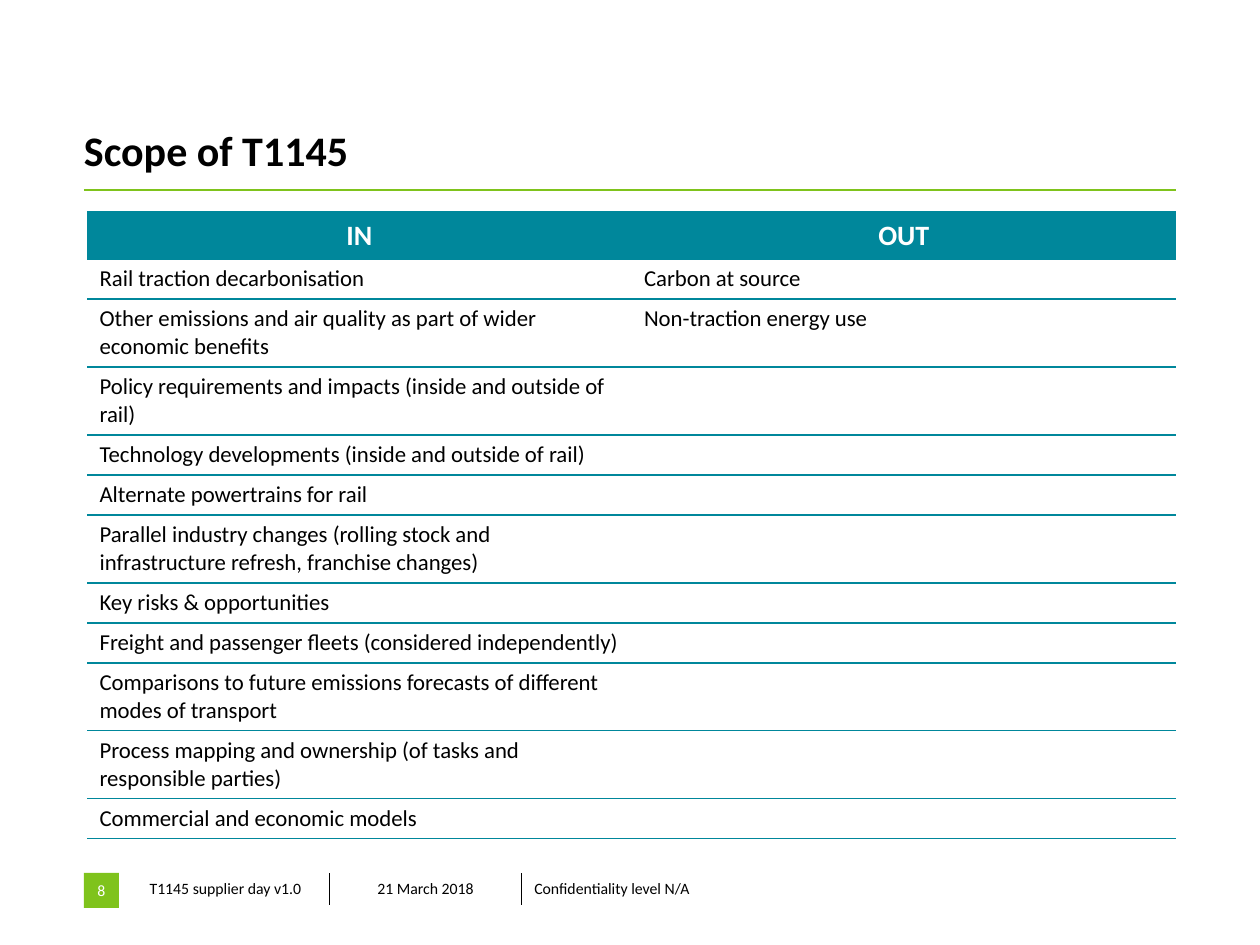
from dataclasses import dataclass
from lxml.etree import SubElement
from pptx import Presentation
from pptx.dml.color import RGBColor
from pptx.enum.shapes import MSO_CONNECTOR, MSO_SHAPE
from pptx.enum.text import MSO_ANCHOR, PP_ALIGN
from pptx.oxml import parse_xml
from pptx.oxml.ns import nsdecls, qn
from pptx.util import Pt


@dataclass(frozen=True)
class Theme:
    font: str = "Calibri"
    teal: str = "00879B"
    green: str = "7FC31C"
    black: str = "000000"
    white: str = "FFFFFF"
    title: int = 24
    head: int = 16
    body: int = 13
    foot: int = 9


THEME = Theme()
SCALE = 914400 / 126
LINE, TALL, HEAD = 40, 68, 47

# Each entry: in scope, out of scope, row height
SCOPE = [
    ("Rail traction decarbonisation", "Carbon at source", LINE),
    ("Other emissions and air quality as part of wider economic benefits",
     "Non-traction energy use", TALL),
    ("Policy requirements and impacts (inside and outside of rail)", "", TALL),
    ("Technology developments (inside and outside of rail)", "", LINE),
    ("Alternate powertrains for rail", "", LINE),
    ("Parallel industry changes (rolling stock and infrastructure refresh, "
     "franchise changes)", "", TALL),
    ("Key risks & opportunities", "", LINE),
    ("Freight and passenger fleets (considered independently)", "", LINE),
    ("Comparisons to future emissions forecasts of different modes of transport",
     "", TALL),
    ("Process mapping and ownership (of tasks and responsible parties)", "", TALL),
    ("Commercial and economic models", "", LINE),
]
FOOT = ["T1145 supplier day v1.0", "21 March 2018", "Confidentiality level N/A"]


def px(num):
    return round(num * SCALE)


def rgb(color):
    return RGBColor.from_string(color)


def write(frame, text, size, color, bold=False, align=PP_ALIGN.LEFT):
    para = frame.paragraphs[0]
    para.alignment = align
    if not text:
        # An empty cell keeps the body size, so its row stays low
        SubElement(para._p, qn("a:endParaRPr"), sz=str(size * 100))
        return
    run = para.add_run()
    run.text = text
    font = run.font
    font.name, font.size, font.bold = THEME.font, Pt(size), bold
    font.color.rgb = rgb(color)


def edge(cell, sides, color):
    """Draw the named sides of a cell and clear the others."""
    props = cell._tc.get_or_add_tcPr()
    for spot, side in enumerate("LRTB"):
        paint = (f'<a:solidFill><a:srgbClr val="{color}"/></a:solidFill>'
                 if side in sides else "<a:noFill/>")
        props.insert(spot, parse_xml(
            f'<a:ln{side} {nsdecls("a")} w="12700">{paint}</a:ln{side}>'))


def add_grid(slide, box, rows, cols):
    grid = slide.shapes.add_table(rows, cols, *map(px, box)).table
    grid.first_row = grid.horz_banding = False
    for col in grid.columns:
        col.width = px(box[2] / cols)
    return grid


def add_title(slide, box):
    left, top, width, height = box
    frame = slide.shapes.add_textbox(*map(px, box)).text_frame
    frame.word_wrap = True
    frame.vertical_anchor = MSO_ANCHOR.BOTTOM
    frame.margin_left = frame.margin_right = 0
    frame.margin_top = frame.margin_bottom = 0
    write(frame, "Scope of T1145", THEME.title, THEME.black, True)

    # Rule below the title
    y = px(top + height + 15)
    rule = slide.shapes.add_connector(
        MSO_CONNECTOR.STRAIGHT, px(left), y, px(left + width), y)
    rule.line.color.rgb = rgb(THEME.green)
    rule.line.width = Pt(0.6)
    SubElement(rule._element.spPr, qn("a:effectLst"))


def add_scope(slide, box):
    rows = [("IN", "OUT", HEAD)] + SCOPE
    grid = add_grid(slide, box, len(rows), 2)
    for i, (*texts, height) in enumerate(rows):
        grid.rows[i].height = px(height)
        for j, text in enumerate(texts):
            cell = grid.cell(i, j)
            if i == 0:
                cell.fill.solid()
                cell.fill.fore_color.rgb = rgb(THEME.teal)
                write(cell.text_frame, text, THEME.head, THEME.white, True,
                      PP_ALIGN.CENTER)
            else:
                cell.fill.background()
                write(cell.text_frame, text, THEME.body, THEME.black)
            edge(cell, "TB", THEME.teal)


def add_foot(slide, box):
    left, top, width, height = box

    # Page number
    size = px(35)
    tile = slide.shapes.add_shape(
        MSO_SHAPE.RECTANGLE, px(left), px(top), size, size)
    tile.shadow.inherit = False
    tile.fill.solid()
    tile.fill.fore_color.rgb = rgb(THEME.green)
    tile.line.fill.background()
    frame = tile.text_frame
    frame.margin_left = frame.margin_right = px(5)
    frame.margin_top = frame.margin_bottom = px(5)
    frame.vertical_anchor = MSO_ANCHOR.MIDDLE
    write(frame, "8", THEME.foot, THEME.white, align=PP_ALIGN.CENTER)

    # Document details, split by upright lines
    grid = add_grid(slide, (left + 53, top, width - 53, height), 1, len(FOOT))
    grid.rows[0].height = px(height)
    for j, (text, sides) in enumerate(zip(FOOT, ("R", "LR", "L"))):
        cell = grid.cell(0, j)
        cell.fill.background()
        cell.vertical_anchor = MSO_ANCHOR.MIDDLE
        align = PP_ALIGN.CENTER if j == 1 else PP_ALIGN.LEFT
        write(cell.text_frame, text, THEME.foot, THEME.black, align=align)
        edge(cell, sides, THEME.black)


def main():
    deck = Presentation()
    deck.slide_width, deck.slide_height = px(1260), px(945)
    slide = deck.slides.add_slide(deck.slide_layouts[6])
    add_title(slide, (84, 63, 1092, 112))
    add_scope(slide, (87, 212, 1089, 629))
    add_foot(slide, (84, 873, 630, 32))
    deck.save("out.pptx")


if __name__ == "__main__":
    main()
